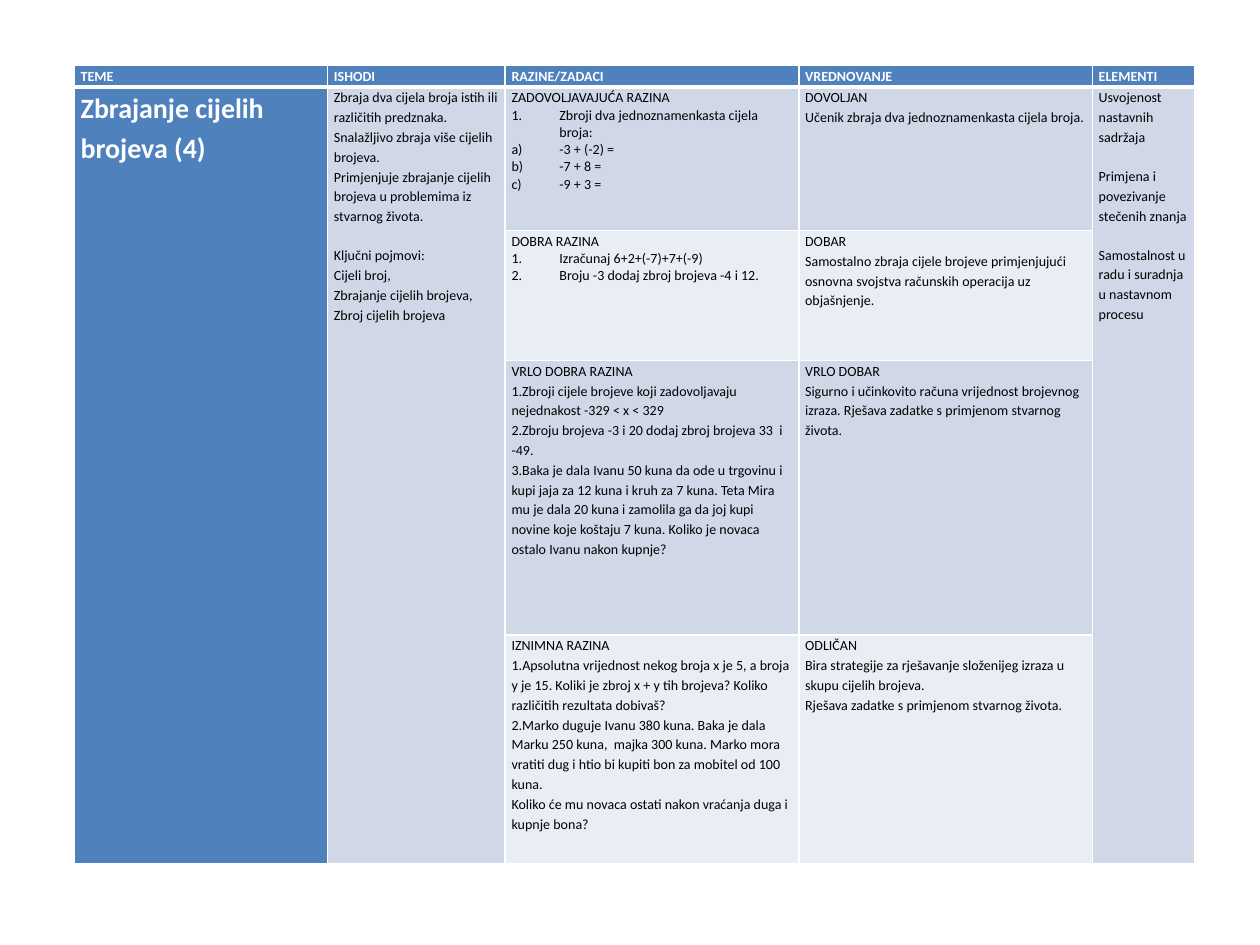
from lxml import etree
from pptx import Presentation
from pptx.dml.color import RGBColor
from pptx.oxml.ns import qn
from pptx.util import Inches, Pt

THEME = {
    "font": "Calibri", "body": 8, "topic": 16, "leading": 1.15, "gap": 11,
    "accent": "4F81BD", "band": "D0D8E8", "light": "E9EDF4",
    "white": "FFFFFF", "black": "000000", "rule": 1, "header_rule": 3,
}


def numbered(content, scheme="arabicPeriod"):
    return {"content": content, "scheme": scheme}


def spaced(content):
    return {"content": content, "before": THEME["gap"]}


HEADERS = ["TEME", "ISHODI", "RAZINE/ZADACI", "VREDNOVANJE", "ELEMENTI"]
TOPIC = ["Zbrajanje cijelih brojeva (4)"]
OUTCOMES = [
    "Zbraja dva cijela broja istih ili različitih predznaka.",
    "Snalažljivo zbraja više cijelih brojeva.",
    "Primjenjuje zbrajanje cijelih brojeva u problemima iz stvarnog života.",
    spaced("Ključni pojmovi:"),
    "Cijeli broj,",
    "Zbrajanje cijelih brojeva,",
    "Zbroj cijelih brojeva",
]
ELEMENTS = [
    "Usvojenost nastavnih sadržaja",
    spaced("Primjena i povezivanje stečenih znanja"),
    spaced("Samostalnost u radu i suradnja u nastavnom procesu"),
]
LEVELS = [  # (tasks, grading)
    (["ZADOVOLJAVAJUĆA RAZINA",
      numbered("Zbroji dva jednoznamenkasta cijela broja:"),
      numbered("-3 + (-2) =", "alphaLcParenR"),
      numbered("-7 + 8 =", "alphaLcParenR"),
      numbered("-9 + 3 =", "alphaLcParenR")],
     ["DOVOLJAN", "Učenik zbraja dva jednoznamenkasta cijela broja."]),
    (["DOBRA RAZINA",
      numbered("Izračunaj 6+2+(-7)+7+(-9)"),
      numbered("Broju -3 dodaj zbroj brojeva -4 i 12.")],
     ["DOBAR",
      "Samostalno zbraja cijele brojeve primjenjujući osnovna svojstva "
      "računskih operacija uz objašnjenje."]),
    (["VRLO DOBRA RAZINA",
      "1.Zbroji cijele brojeve koji zadovoljavaju nejednakost -329 < x < 329",
      "2.Zbroju brojeva -3 i 20 dodaj zbroj brojeva 33  i -49.",
      "3.Baka je dala Ivanu 50 kuna da ode u trgovinu i kupi jaja za 12 kuna "
      "i kruh za 7 kuna. Teta Mira mu je dala 20 kuna i zamolila ga da joj kupi "
      "novine koje koštaju 7 kuna. Koliko je novaca ostalo Ivanu nakon kupnje?"],
     ["VRLO DOBAR",
      "Sigurno i učinkovito računa vrijednost brojevnog izraza. "
      "Rješava zadatke s primjenom stvarnog života."]),
    (["IZNIMNA RAZINA",
      "1.Apsolutna vrijednost nekog broja x je 5, a broja y je 15. Koliki je "
      "zbroj x + y tih brojeva? Koliko različitih rezultata dobivaš?",
      "2.Marko duguje Ivanu 380 kuna. Baka je dala Marku 250 kuna,  majka 300 "
      "kuna. Marko mora vratiti dug i htio bi kupiti bon za mobitel od 100 kuna.",
      "Koliko će mu novaca ostati nakon vraćanja duga i kupnje bona?"],
     ["ODLIČAN",
      "Bira strategije za rješavanje složenijeg izraza u skupu cijelih brojeva.",
      "Rješava zadatke s primjenom stvarnog života."]),
]
COLUMN_WIDTHS = [2.01, 1.41, 2.33, 2.33, 0.81]
ROW_HEIGHTS = [0.17, 1.14, 1.03, 2.18, 1.82]
MERGED_COLUMNS = (0, 1, 4)
LEFT, TOP = 0.59, 0.52
HANGING = 0.38


def write(paragraph, content, size=THEME["body"], color=THEME["black"],
          bold=False, before=0, scheme=None):
    run = paragraph.add_run()
    run.text = content
    run.font.name, run.font.size, run.font.bold = THEME["font"], Pt(size), bold
    run.font.color.rgb = RGBColor.from_string(color)
    paragraph.space_before = Pt(before)
    if scheme:
        properties = paragraph._p.get_or_add_pPr()
        properties.set("marL", str(Inches(HANGING)))
        properties.set("indent", str(-Inches(HANGING)))
        etree.SubElement(properties, qn("a:buAutoNum"), type=scheme)
    else:
        paragraph.line_spacing = THEME["leading"]


def fill_cell(cell, paragraphs, **style):
    cell.margin_left = cell.margin_right = Inches(0.05)
    cell.margin_top = cell.margin_bottom = 0
    frame = cell.text_frame
    for i, item in enumerate(paragraphs):
        paragraph = frame.add_paragraph() if i else frame.paragraphs[0]
        options = item if isinstance(item, dict) else {"content": item}
        write(paragraph, **options, **style)


def paint_cell(cell, color, header):
    cell.fill.solid()
    cell.fill.fore_color.rgb = RGBColor.from_string(color)
    properties = cell._tc.get_or_add_tcPr()
    for i, side in enumerate("LRTB"):
        width = THEME["header_rule" if header and side == "B" else "rule"]
        line = etree.Element(qn(f"a:ln{side}"), w=str(Pt(width)))
        solid = etree.SubElement(line, qn("a:solidFill"))
        etree.SubElement(solid, qn("a:srgbClr"), val=THEME["white"])
        properties.insert(i, line)


def cell_color(row, column):
    if row == 0 or column == 0:
        return THEME["accent"]
    if column in MERGED_COLUMNS or row % 2:
        return THEME["band"]
    return THEME["light"]


def main():
    deck = Presentation()
    deck.slide_width, deck.slide_height = Inches(10), Inches(7.5)
    slide = deck.slides.add_slide(deck.slide_layouts[6])
    table = slide.shapes.add_table(
        len(ROW_HEIGHTS), len(COLUMN_WIDTHS), Inches(LEFT), Inches(TOP),
        Inches(sum(COLUMN_WIDTHS)), Inches(sum(ROW_HEIGHTS))).table
    table.horz_banding = False
    for column, width in zip(table.columns, COLUMN_WIDTHS):
        column.width = Inches(width)
    for row, height in zip(table.rows, ROW_HEIGHTS):
        row.height = Inches(height)

    for r in range(len(ROW_HEIGHTS)):
        for c in range(len(COLUMN_WIDTHS)):
            paint_cell(table.cell(r, c), cell_color(r, c), header=r == 0)
    for c in MERGED_COLUMNS:
        table.cell(1, c).merge(table.cell(len(LEVELS), c))

    strong = {"color": THEME["white"], "bold": True}
    for c, header in enumerate(HEADERS):
        fill_cell(table.cell(0, c), [header], **strong)
    fill_cell(table.cell(1, 0), TOPIC, size=THEME["topic"], **strong)
    fill_cell(table.cell(1, 1), OUTCOMES)
    fill_cell(table.cell(1, 4), ELEMENTS)
    for r, (tasks, grading) in enumerate(LEVELS, start=1):
        fill_cell(table.cell(r, 2), tasks)
        fill_cell(table.cell(r, 3), grading)
    deck.save("out.pptx")


if __name__ == "__main__":
    main()
